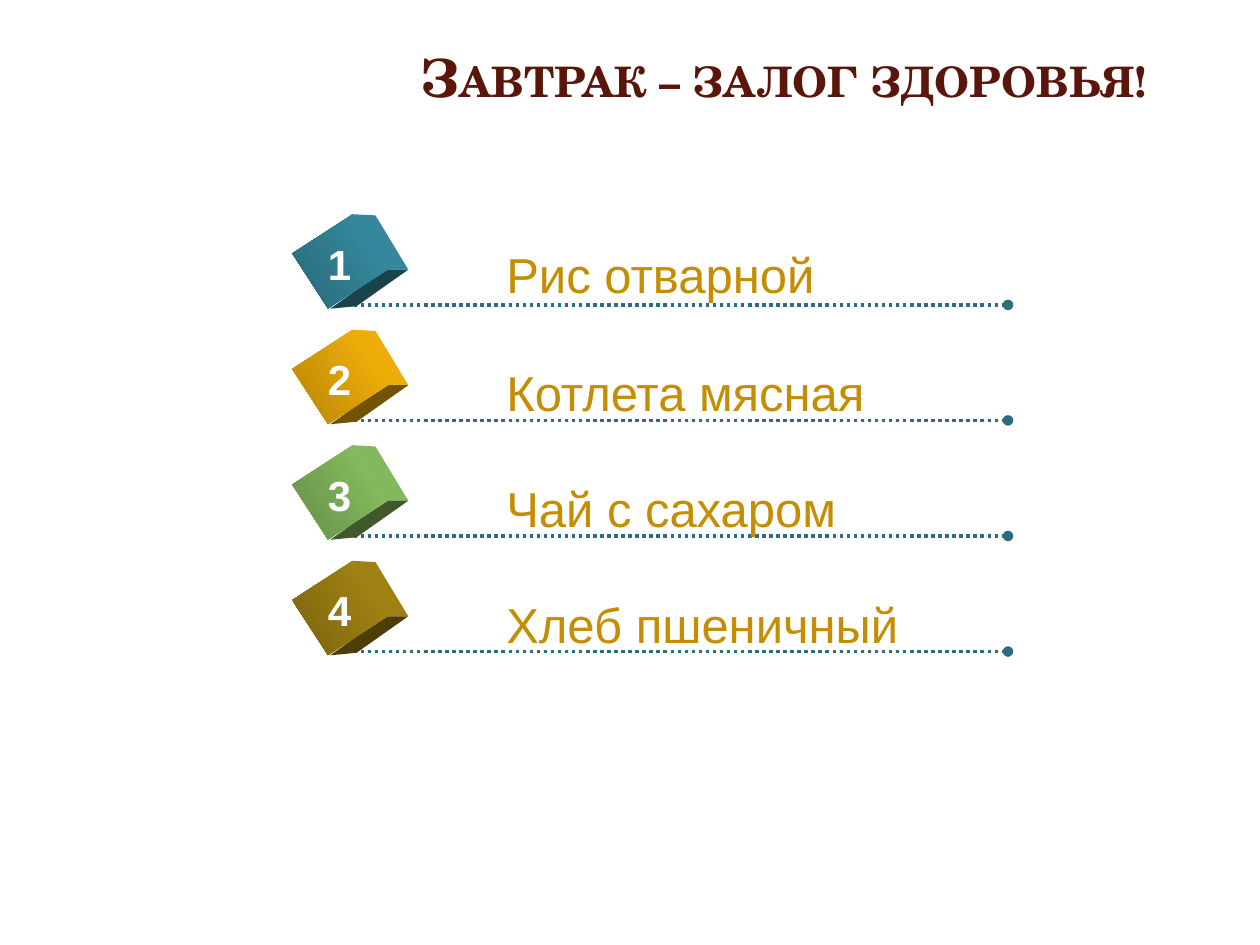
from lxml.etree import SubElement
from pptx import Presentation
from pptx.dml.color import RGBColor as Rgb
from pptx.enum.dml import MSO_LINE as Dash
from pptx.enum.shapes import MSO_CONNECTOR as Connector, MSO_SHAPE as Shape
from pptx.enum.text import MSO_ANCHOR as Anchor, MSO_AUTO_SIZE as AutoSize, PP_ALIGN as Align
from pptx.oxml.ns import qn
from pptx.util import Inches, Pt

COLORS = {"title": "5A160B", "dish": "C58D01", "rule": "2A6D7D", "number": "FFFFFF"}
DISHES = [
    ("Рис отварной", 1.89, 2.68, ("3891A7", "286877", "35879C", "1A434E")),
    ("Котлета мясная", 2.83, 3.08, ("FEB80A", "B68407", "EFAD0A", "725305")),
    ("Чай с сахаром", 3.75, 2.85, ("8DC765", "658E48", "83B95E", "3F592D")),
    ("Хлеб пшеничный", 4.67, 3.35, ("AA8A14", "7A630E", "9E8013", "4C3E09")),
]
FIRST_RULE, ROW_STEP = 2.42, 0.917
SIDE_FACE = [(2.79, -0.72), (2.98, -0.71), (3.24, -0.28), (3.06, -0.28)]
BOTTOM_FACE = [(3.06, -0.28), (3.24, -0.28), (2.83, 0.01), (2.62, 0.03)]


def write_text(box, text, size, color, font="Arial", bold=False, align=Align.LEFT, small_caps=False):
    para = box.text_frame.paragraphs[0]
    para.alignment = align
    span = para.add_run()
    span.text = text
    span.font.name = font
    span.font.size = Pt(size)
    span.font.bold = bold
    span.font.color.rgb = Rgb.from_string(color)
    if small_caps:
        span.font._element.set("cap", "small")


class MenuPage:
    def __init__(self, deck):
        self.page = deck.slides.add_slide(deck.slide_layouts[6])
        self.shapes = self.page.shapes

    def text(self, text, left, top, width, height, wrap=False, anchor=Anchor.TOP, **style):
        box = self.shapes.add_textbox(Inches(left), Inches(top), Inches(width), Inches(height))
        frame = box.text_frame
        frame.word_wrap = wrap
        frame.auto_size = AutoSize.NONE if wrap else AutoSize.SHAPE_TO_FIT_TEXT
        frame.vertical_anchor = anchor
        write_text(box, text, **style)

    def rule(self, left, right, top):
        line = self.shapes.add_connector(
            Connector.STRAIGHT, Inches(left), Inches(top), Inches(right), Inches(top))
        line.line.color.rgb = Rgb.from_string(COLORS["rule"])
        line.line.width = Pt(2)
        line.line.dash_style = Dash.ROUND_DOT
        SubElement(line.line._get_or_add_ln(), qn("a:tailEnd"), type="oval")
        SubElement(line._element.spPr, qn("a:effectLst"))

    def face(self, points, top, color):
        corners = [(Inches(x), Inches(top + y)) for x, y in points]
        builder = self.shapes.build_freeform(*corners[0])
        builder.add_line_segments(corners[1:])
        shape = builder.convert_to_shape()
        shape.shadow.inherit = False
        shape.fill.solid()
        shape.fill.fore_color.rgb = Rgb.from_string(color)
        shape.line.fill.background()

    def cube(self, top, light, dark, side, bottom):
        self.face(SIDE_FACE, top, side)
        self.face(BOTTOM_FACE, top, bottom)
        front = self.shapes.add_shape(
            Shape.RECTANGLE, Inches(2.44), Inches(top - 0.63), Inches(0.52), Inches(0.57))
        front.rotation = 57
        front.shadow.inherit = False
        front.line.fill.background()
        front.fill.gradient()
        front.fill.gradient_angle = 270
        for stop, color in zip(front.fill.gradient_stops, (light, dark)):
            stop.color.rgb = Rgb.from_string(color)


def main():
    deck = Presentation()
    deck.slide_width, deck.slide_height = Inches(10), Inches(7.5)
    menu = MenuPage(deck)
    menu.text("Завтрак – залог здоровья!", 2.56, 0.02, 7.32, 1.18, wrap=True, anchor=Anchor.MIDDLE,
              size=30, color=COLORS["title"], font="TeX Gyre Schola", bold=True,
              align=Align.CENTER, small_caps=True)
    for index, (dish, label_top, label_width, shades) in enumerate(DISHES):
        top = FIRST_RULE + index * ROW_STEP
        menu.rule(2.75, 8, top)
        menu.cube(top, *shades)
        menu.text(str(index + 1), 2.5, top - 0.58, 0.39, 0.5, size=24,
                  color=COLORS["number"], bold=True, align=Align.CENTER)
        menu.text(dish, 3.92, label_top, label_width, 0.57, size=28, color=COLORS["dish"])
    deck.save("out.pptx")


if __name__ == "__main__":
    main()
